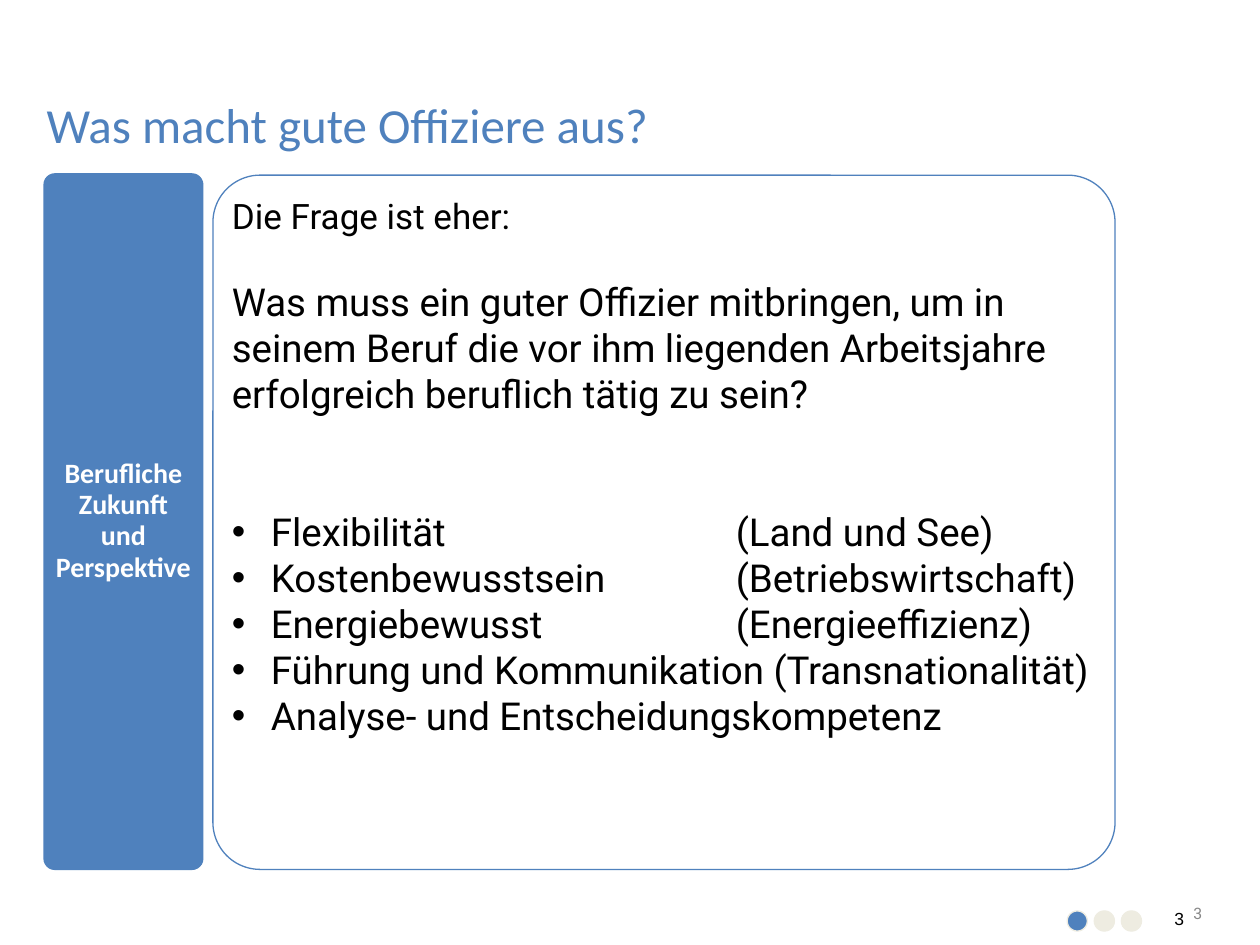
from lxml import etree
from pptx import Presentation
from pptx.dml.color import RGBColor
from pptx.enum import shapes, text
from pptx.oxml import ns
from pptx.util import Inches, Pt

BLUE = RGBColor(0x4F, 0x81, 0xBD)
SAND = RGBColor(0xEE, 0xEC, 0xE1)
GREY = RGBColor(0x87, 0x87, 0x87)
BLACK = RGBColor(0, 0, 0)
WHITE = RGBColor(0xFF, 0xFF, 0xFF)

CORNER = 0.068
INDENT = 0.31
TAB_STOP = 4

TOPIC = ["Berufliche", "Zukunft", "und", "Perspektive"]
LEAD = "Die Frage ist eher:"
QUESTION = ("Was muss ein guter Offizier mitbringen, um in seinem Beruf die vor ihm "
            "liegenden Arbeitsjahre erfolgreich beruflich tätig zu sein?")
SKILLS = [
    "Flexibilität\t(Land und See)",
    "Kostenbewusstsein\t(Betriebswirtschaft)",
    "Energiebewusst\t(Energieeffizienz)",
    "Führung und Kommunikation (Transnationalität)",
    "Analyse- und Entscheidungskompetenz",
]


def place(shape, box):
    shape.left, shape.top, shape.width, shape.height = map(Inches, box)


def prepare_frame(frame, insets=(0, 0, 0, 0), anchor=text.MSO_ANCHOR.TOP, wrap=True):
    frame.auto_size = text.MSO_AUTO_SIZE.NONE
    frame.word_wrap = wrap
    frame.vertical_anchor = anchor
    sides = ("margin_left", "margin_top", "margin_right", "margin_bottom")
    for side, inset in zip(sides, insets):
        setattr(frame, side, Inches(inset))


def write(paragraph, wording, font, color, **layout):
    paragraph.text = wording
    defaults = {"alignment": text.PP_ALIGN.LEFT, "line_spacing": 1.0,
                "space_before": Pt(0), "space_after": Pt(0)}
    for name, value in {**defaults, **layout}.items():
        setattr(paragraph, name, value)
    for name, value in font.items():
        setattr(paragraph.runs[0].font, name, value)
    paragraph.runs[0].font.color.rgb = color


def set_bullet(paragraph, bulleted):
    properties = paragraph._p.get_or_add_pPr()
    indent = Inches(INDENT) if bulleted else 0
    properties.set("marL", str(indent))
    properties.set("indent", str(-indent))
    if not bulleted:
        etree.SubElement(properties, ns.qn("a:buNone"))
        return
    etree.SubElement(properties, ns.qn("a:buFont"), typeface="Arial")
    etree.SubElement(properties, ns.qn("a:buChar"), char="•")
    tabs = etree.SubElement(properties, ns.qn("a:tabLst"))
    etree.SubElement(tabs, ns.qn("a:tab"), pos=str(Inches(TAB_STOP)), algn="l")


def add_panel(slide, kind, box, fill, line):
    panel = slide.shapes.add_shape(kind, *map(Inches, box))
    panel.shadow.inherit = False
    if fill is None:
        panel.fill.background()
    else:
        panel.fill.solid()
        panel.fill.fore_color.rgb = fill
    panel.line.color.rgb = line
    panel.line.width = Pt(0.75)
    return panel


def add_heading(slide, box):
    heading = slide.shapes.title
    place(heading, box)
    prepare_frame(heading.text_frame, anchor=text.MSO_ANCHOR.BOTTOM)
    write(heading.text_frame.paragraphs[0], "Was macht gute Offiziere aus?",
          {"name": "Calibri", "size": Pt(28)}, BLUE, line_spacing=0.85)


def add_topic(slide, box):
    topic = add_panel(slide, shapes.MSO_SHAPE.ROUNDED_RECTANGLE, box, BLUE, BLUE)
    topic.adjustments[0] = CORNER
    frame = topic.text_frame
    prepare_frame(frame, (0.04,) * 4, text.MSO_ANCHOR.MIDDLE)
    for index, line in enumerate(TOPIC):
        paragraph = frame.add_paragraph() if index else frame.paragraphs[0]
        write(paragraph, line, {"name": "Calibri", "size": Pt(16), "bold": True}, WHITE,
              alignment=text.PP_ALIGN.CENTER, line_spacing=0.85, space_after=Pt(1.6))


def add_content(slide, box):
    outline = add_panel(slide, shapes.MSO_SHAPE.ROUNDED_RECTANGLE, box, None, BLUE)
    outline.adjustments[0] = CORNER

    # The list sits inside the rounded corners
    left, top, width, height = box
    inset = 0.15
    content = slide.placeholders[1]
    place(content, (left + inset, top + inset, width - 2 * inset, height - 2 * inset))
    frame = content.text_frame
    prepare_frame(frame)

    # Wording, size, space before, bulleted
    entries = [(LEAD, 20, 0, False), (QUESTION, 22, 24, False)]
    entries += [(skill, 22, 0 if index else 52, True) for index, skill in enumerate(SKILLS)]
    for index, (wording, size, gap, bulleted) in enumerate(entries):
        paragraph = frame.add_paragraph() if index else frame.paragraphs[0]
        set_bullet(paragraph, bulleted)
        write(paragraph, wording, {"name": "Roboto", "size": Pt(size)}, BLACK,
              space_before=Pt(gap))


def add_progress_dots(slide, box):
    left, top, width, size = box
    step = (width - size) / 2
    for index, fill in enumerate((BLUE, SAND, SAND)):
        add_panel(slide, shapes.MSO_SHAPE.OVAL, (left + index * step, top, size, size),
                  fill, SAND)


def add_page_number(slide, box, font, color, insets, alignment):
    number = slide.shapes.add_textbox(*map(Inches, box))
    prepare_frame(number.text_frame, insets, wrap=False)
    write(number.text_frame.paragraphs[0], "3", font, color, alignment=alignment)


def main():
    deck = Presentation()
    deck.slide_width, deck.slide_height = Inches(10), Inches(7.5)
    slide = deck.slides.add_slide(deck.slide_layouts[1])

    add_heading(slide, (0.37, 0.55, 8.7, 0.67))
    add_topic(slide, (0.35, 1.38, 1.26, 5.52))
    add_content(slide, (1.69, 1.39, 7.16, 5.51))

    # Footer
    add_progress_dots(slide, (8.47, 7.23, 0.59, 0.16))
    add_page_number(slide, (9.19, 7.12, 0.45, 0.25), {"name": "Roboto", "size": Pt(9)},
                    GREY, (0.1, 0.05, 0.1, 0.05), text.PP_ALIGN.RIGHT)
    add_page_number(slide, (9.25, 7.16, 0.17, 0.16), {"name": "Arial", "size": Pt(10)},
                    BLACK, (0.07, 0.05, 0, 0), text.PP_ALIGN.LEFT)

    deck.save("out.pptx")


if __name__ == "__main__":
    main()
